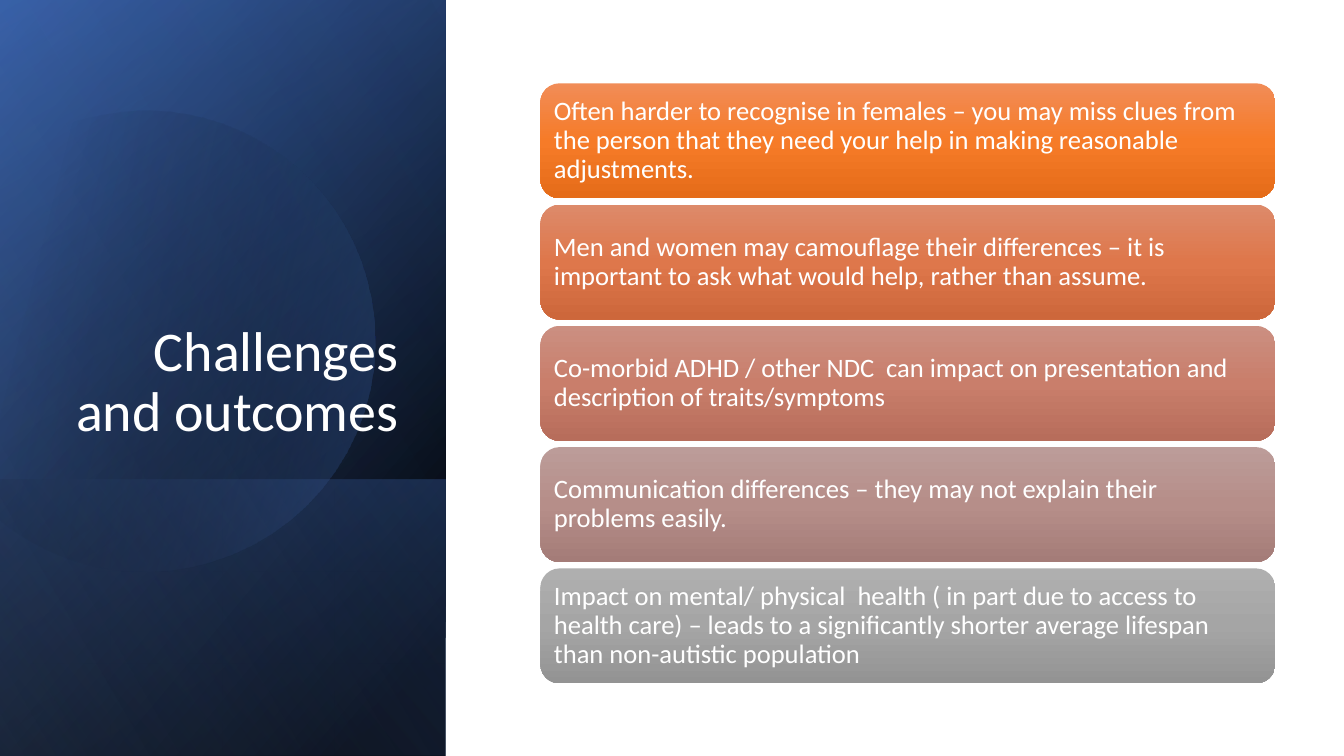
from math import cos, radians, sin

from lxml.etree import SubElement
from pptx import Presentation
from pptx.dml.color import RGBColor
from pptx.enum.shapes import MSO_SHAPE as SHAPE
from pptx.enum.text import MSO_ANCHOR as ANCHOR, PP_ALIGN as ALIGN
from pptx.oxml.ns import qn
from pptx.util import Cm, Pt

PANEL_W, SLIDE_W, SLIDE_H = 11.23, 33.87, 19.05
DISC_TURN = 343.9
DISC_CENTRE = (4.03, 8.5)
DISC_START = (3.78, 2.79)
DISC_CURVES = [
    [(6.25, 2.84), (8.51, 4.5), (9.22, 6.99)],
    [(10.11, 10.08), (8.33, 13.28), (5.26, 14.17)],
    [(3.33, 14.73), (1.35, 14.25), (-0.08, 13.06)],
    [(-0.38, 12.78)] * 3,
    [(-0.38, 4.45)] * 3,
    [(0, 4.09)] * 3,
    [(0.58, 3.61), (1.27, 3.25), (2.03, 3.02)],
    [(2.62, 2.87), (3.2, 2.79), (3.78, 2.79)],
]
ROWS = [
    ("Often harder to recognise in females – you may miss clues from the person "
     "that they need your help in making reasonable adjustments.",
     ("F18C57", "F67B28", "E56C19")),
    ("Men and women may camouflage their differences – it is important to ask "
     "what would help, rather than assume.",
     ("DD8A6A", "DE774B", "CD673B")),
    ("Co-morbid ADHD / other NDC  can impact on presentation and description of "
     "traits/symptoms",
     ("CB8F81", "C97E6B", "B76D5B")),
    ("Communication differences – they may not explain their  problems easily.",
     ("BC9C99", "B68E89", "A47C78")),
    ("Impact on mental/ physical  health ( in part due to access to health care) "
     "– leads to a significantly shorter average lifespan than non-autistic "
     "population",
     ("AFAFAF", "A5A5A5", "939393")),
]


def rgb(value):
    """Turn a hex string into a colour."""
    return RGBColor.from_string(value)


def paint(sp, stops, angle):
    """Fill a shape with (position, colour, opacity) stops, without line or shadow."""
    sp.shadow.inherit = False
    sp.line.fill.background()
    sp.fill.gradient()
    sp.fill.gradient_angle = (360 - angle) % 360
    gs_list = sp._element.spPr.find(qn("a:gradFill")).find(qn("a:gsLst"))
    gs_list.clear()
    for position, colour, opacity in stops:
        gs = SubElement(gs_list, qn("a:gs"), pos=str(position * 1000))
        clr = SubElement(gs, qn("a:srgbClr"), val=colour)
        if opacity < 100:
            SubElement(clr, qn("a:alpha"), val=str(opacity * 1000))


def write(sp, text, size=19, colour="FFFFFF", align=ALIGN.LEFT,
          anchor=ANCHOR.MIDDLE, inset=(0.2, 0.2)):
    """Put one formatted paragraph into a shape."""
    tf = sp.text_frame
    tf.word_wrap = True
    tf.vertical_anchor = anchor
    tf.margin_left = tf.margin_right = Cm(inset[0])
    tf.margin_top = tf.margin_bottom = Cm(inset[1])
    p = tf.paragraphs[0]
    p.alignment = align
    p.line_spacing = 0.9
    r = p.add_run()
    r.text = text
    r.font.name = "Calibri"
    r.font.size = Pt(size)
    r.font.color.rgb = rgb(colour)


def add_layer(s, box, stops, angle):
    """Cover the box with a mirrored rectangle turned by a quarter."""
    x, y, w, h = box
    sp = s.shapes.add_shape(SHAPE.RECTANGLE, Cm(x + (w - h) / 2),
                            Cm(y + (h - w) / 2), Cm(h), Cm(w))
    sp.rotation = 90
    sp._element.spPr.find(qn("a:xfrm")).set("flipH", "1")
    paint(sp, stops, angle)


def bezier(a, b, c, d, steps=16):
    """List the points of a cubic curve after its start."""
    points = []
    for i in range(1, steps + 1):
        t = i / steps
        u = 1 - t
        points.append(tuple(u**3 * k + 3 * u * u * t * m + 3 * u * t * t * n + t**3 * q
                            for k, m, n, q in zip(a, b, c, d)))
    return points


def add_disc(s, box):
    """Draw the tilted, cut-off disc in the panel."""
    x, y = box[:2]
    cx, cy = DISC_CENTRE
    turn = radians(-DISC_TURN)
    outline = [DISC_START]
    for curve in DISC_CURVES:
        if curve[0] == curve[2]:
            outline.append(curve[2])
        else:
            outline += bezier(outline[-1], *curve)
    level = [(Cm(x + cx + (px - cx) * cos(turn) - (py - cy) * sin(turn)),
              Cm(y + cy + (px - cx) * sin(turn) + (py - cy) * cos(turn)))
             for px, py in outline]
    builder = s.shapes.build_freeform(*level[0])
    builder.add_line_segments(level[1:], close=True)
    sp = builder.convert_to_shape()
    sp.rotation = DISC_TURN
    paint(sp, [(29, "000000", 0), (100, "4472C4", 43)], 30)


def add_title_panel(s, box, title):
    """Build the dark panel with its layers and title."""
    x, y, w, h = box
    foot = 6.96
    add_layer(s, box, [(8, "000000", 100), (100, "2F5597", 100)], 50)
    add_layer(s, box, [(0, "000000", 0), (99, "4472C4", 46)], 30)
    add_layer(s, (x, y + h - foot, w, foot),
              [(2, "4472C4", 29), (100, "000000", 30)], 130)
    add_disc(s, box)
    add_layer(s, box, [(0, "000000", 0), (99, "8FAADC", 11)], 120)
    sp = s.shapes.add_textbox(Cm(x + 1.63), Cm(y + 4.67), Cm(8.66), Cm(6.65))
    write(sp, title, size=40, align=ALIGN.RIGHT, anchor=ANCHOR.BOTTOM,
          inset=(0.25, 0.13))


def add_rows(s, box, rows, gap=0.16):
    """Stack one rounded bar per row in the box."""
    x, y, w, h = box
    bar_h = (h - gap * (len(rows) - 1)) / len(rows)
    for i, (text, colours) in enumerate(rows):
        sp = s.shapes.add_shape(SHAPE.ROUNDED_RECTANGLE, Cm(x),
                                Cm(y + i * (bar_h + gap)), Cm(w), Cm(bar_h))
        paint(sp, [(n * 50, colour, 100) for n, colour in enumerate(colours)], 90)
        write(sp, text)


def main():
    """Build and save the slide."""
    prs = Presentation()
    prs.slide_width, prs.slide_height = Cm(SLIDE_W), Cm(SLIDE_H)
    s = prs.slides.add_slide(prs.slide_layouts[6])
    add_title_panel(s, (0, 0, PANEL_W, SLIDE_H), "Challenges and outcomes")
    add_rows(s, (13.62, 2.1, 18.52, 15.12), ROWS)
    prs.save("out.pptx")


if __name__ == "__main__":
    main()
